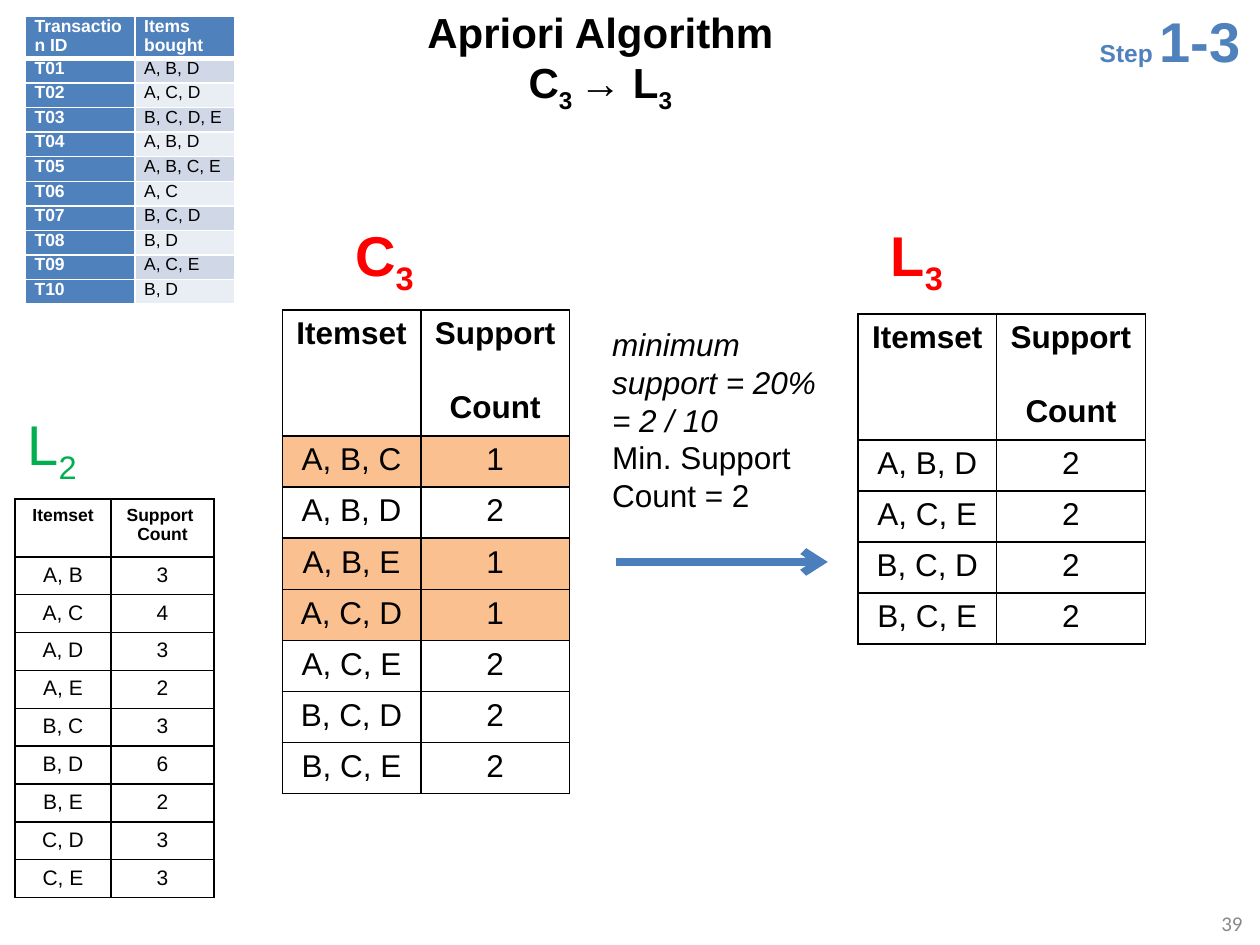
import pptx
import pptx.dml.color
import pptx.enum.shapes
import pptx.enum.text
import pptx.oxml.ns
import pptx.util
from lxml import etree

ALIGN = pptx.enum.text.PP_ALIGN
ANCHOR = pptx.enum.text.MSO_ANCHOR
BLACK, WHITE, RED, GREEN = "000000", "FFFFFF", "FF0000", "00B050"
BLUE, ARROW_BLUE, GREY, ORANGE = "4F81BD", "4B7EBC", "898989", "FAC090"
BANDS = ("D0D8E8", "E9EDF4")
SUB = {"sub": True}


def rgb(hex_code):
    return pptx.dml.color.RGBColor.from_string(hex_code)


def xml_child(parent, tag, **attributes):
    return etree.SubElement(parent, pptx.oxml.ns.qn(tag), **attributes)


class SlideBuilder:
    """Places elements on a grid of 100 columns by 75 rows."""

    def __init__(self, deck, font="Arial"):
        self.font = font
        self.column = deck.slide_width / 100
        self.row = deck.slide_height / 75
        self.slide = deck.slides.add_slide(deck.slide_layouts[5])

    def box(self, left, top, width, height):
        return [int(n * unit) for n, unit in
                zip((left, top, width, height), (self.column, self.row) * 2)]

    def style_run(self, run, size, color=BLACK, bold=False, italic=False,
                  font=None, sub=False):
        run.font.name = font or self.font
        run.font.size = pptx.util.Pt(size)
        run.font.bold, run.font.italic = bold, italic
        run.font.color.rgb = rgb(color)
        if sub:
            run.font._element.set("baseline", "-25000")

    def set_paragraphs(self, frame, paragraphs, align=ALIGN.LEFT, **style):
        """Each paragraph is a list of (text, style changes) pairs."""
        for index, parts in enumerate(paragraphs):
            paragraph = frame.add_paragraph() if index else frame.paragraphs[0]
            paragraph.alignment = align
            for text, changes in parts:
                if "\v" in text:
                    paragraph.text = text
                    runs = paragraph.runs
                else:
                    runs = [paragraph.add_run()]
                    runs[0].text = text
                for run in runs:
                    self.style_run(run, **{**style, **changes})
            for line_break in paragraph._p.findall(pptx.oxml.ns.qn("a:br")):
                xml_child(line_break, "a:rPr", sz=str(style["size"] * 100))

    def title(self, place, paragraphs, **style):
        heading = self.slide.shapes.title
        heading.left, heading.top, heading.width, heading.height = self.box(*place)
        frame = heading.text_frame
        frame.vertical_anchor = ANCHOR.TOP
        frame.auto_size = pptx.enum.text.MSO_AUTO_SIZE.SHAPE_TO_FIT_TEXT
        self.set_paragraphs(frame, paragraphs, ALIGN.CENTER, **style)

    def text(self, place, paragraphs, align=ALIGN.LEFT, anchor=ANCHOR.TOP,
             wrap=False, **style):
        frame = self.slide.shapes.add_textbox(*self.box(*place)).text_frame
        frame.word_wrap = wrap
        frame.vertical_anchor = anchor
        self.set_paragraphs(frame, paragraphs, align, **style)

    def arrow(self, start, end, color, width):
        line = self.slide.shapes.add_connector(
            pptx.enum.shapes.MSO_CONNECTOR.STRAIGHT, *self.box(*start, *end))
        line.line.color.rgb = rgb(color)
        line.line.width = pptx.util.Pt(width)
        xml_child(line.line._get_or_add_ln(), "a:tailEnd", type="arrow")
        xml_child(line._element.spPr, "a:effectLst")

    def borders(self, cell, color, bottom=1):
        properties = cell._tc.get_or_add_tcPr()
        for index, side in enumerate("LRTB"):
            points = bottom if side == "B" else 1
            edge = xml_child(properties, f"a:ln{side}", w=str(points * 12700))
            xml_child(xml_child(edge, "a:solidFill"), "a:srgbClr", val=color)
            properties.insert(index, edge)

    def table(self, place, column_widths, header_height, rows, cell_style,
              border=BLACK, header_border=1, margins=(1, 0.5), align=ALIGN.CENTER):
        """cell_style(row, column, values) gives the fill and the text style."""
        grid = self.slide.shapes.add_table(
            len(rows), len(column_widths), *self.box(*place)).table
        grid.first_row = grid.horz_banding = False
        for column, width in zip(grid.columns, column_widths):
            column.width = int(width * self.column)
        body_height = (place[3] - header_height) / (len(rows) - 1)
        for r, values in enumerate(rows):
            grid.rows[r].height = int((body_height if r else header_height) * self.row)
            for c, value in enumerate(values):
                cell = grid.cell(r, c)
                cell.margin_left = cell.margin_right = int(margins[0] * self.column)
                cell.margin_top = cell.margin_bottom = int(margins[1] * self.row)
                fill, style = cell_style(r, c, values)
                if fill:
                    cell.fill.solid()
                    cell.fill.fore_color.rgb = rgb(fill)
                else:
                    cell.fill.background()
                self.borders(cell, border, 1 if r else header_border)
                self.set_paragraphs(cell.text_frame, [[(value, {})]], align, **style)

    def support_table(self, place, column_widths, header_height, counts,
                      header_size, body_size, minimum=0):
        """Itemsets whose count is below the minimum are highlighted."""
        def cell_style(r, c, values):
            if r == 0:
                return None, {"size": header_size, "bold": True}
            return (ORANGE if int(values[1]) < minimum else None), {"size": body_size}

        rows = [("Itemset", "Support \vCount")]
        rows += [(", ".join(items), str(count)) for items, count in counts]
        self.table(place, column_widths, header_height, rows, cell_style)


def transaction_style(r, c, values):
    if r == 0 or c == 0:
        return BLUE, {"size": 10, "color": WHITE, "bold": True}
    return BANDS[(r - 1) % 2], {"size": 10}


def main():
    deck = pptx.Presentation()
    deck.slide_width, deck.slide_height = pptx.util.Inches(10), pptx.util.Inches(7.5)
    page = SlideBuilder(deck)

    page.title((31.1, 0, 33.1, 9.1),
               [[("Apriori Algorithm", {})],
                [("C", {}), ("3 ", SUB), ("→ L", {}), ("3", SUB)]],
               size=24, bold=True)
    page.text((86.3, 0, 13.3, 6.4), [[("Step ", {}), ("1-3", {"size": 32})]],
              size=14, color=BLUE, bold=True)
    page.text((76.3, 71.3, 23.3, 4), [[("39", {})]], ALIGN.RIGHT, ANCHOR.MIDDLE,
              wrap=True, size=12, color=GREY, font="Calibri")

    baskets = ("ABD", "ACD", "BCDE", "ABD", "ABCE", "AC", "BCD", "BD", "ACE", "BD")
    transactions = [("Transaction ID", "Items bought")]
    transactions += [(f"T{number:02}", ", ".join(items))
                     for number, items in enumerate(baskets, 1)]
    page.table((2, 1.3, 16.5, 22.8), (8.7, 7.9), 3.3, transactions,
               transaction_style, border=WHITE, header_border=3,
               margins=(0.75, 0), align=ALIGN.LEFT)

    for letter, index, left, top, width, color, bold in (
            ("C", "3", 27.2, 17, 6.9, RED, True),
            ("L", "3", 69.7, 17, 6.4, RED, True),
            ("L", "2", 1.2, 32, 6.2, GREEN, False)):
        page.text((left, top, width, 6.4), [[(letter, {}), (index, SUB)]],
                  size=32, color=color, bold=bold)

    pairs = (("AB", 3), ("AC", 4), ("AD", 3), ("AE", 2), ("BC", 3),
             ("BD", 6), ("BE", 2), ("CD", 3), ("CE", 3))
    candidates = (("ABC", 1), ("ABD", 2), ("ABE", 1), ("ACD", 1),
                  ("ACE", 2), ("BCD", 2), ("BCE", 2))
    minimum = 2
    frequent = [entry for entry in candidates if entry[1] >= minimum]
    page.support_table((1.2, 39.6, 15.7, 31.6), (7.6, 8.2), 4.6, pairs, 10, 12)
    page.support_table((22.4, 24.6, 22.8, 35.4), (11, 11.8), 7, candidates,
                       18, 18, minimum)
    page.support_table((68.1, 24.9, 22.8, 23.2), (11, 11.8), 7, frequent, 18, 18)

    slanted = {"italic": True}
    page.text((47.6, 25.3, 18.4, 16.2),
              [[("minimum \vsupport = 20%", slanted)], [("= 2 / 10", slanted)],
               [("Min. Support \vCount = 2", {})]], size=18)
    page.arrow((48.9, 44.6), (65.7, 44.6), ARROW_BLUE, 4.5)

    deck.save("out.pptx")


if __name__ == "__main__":
    main()
